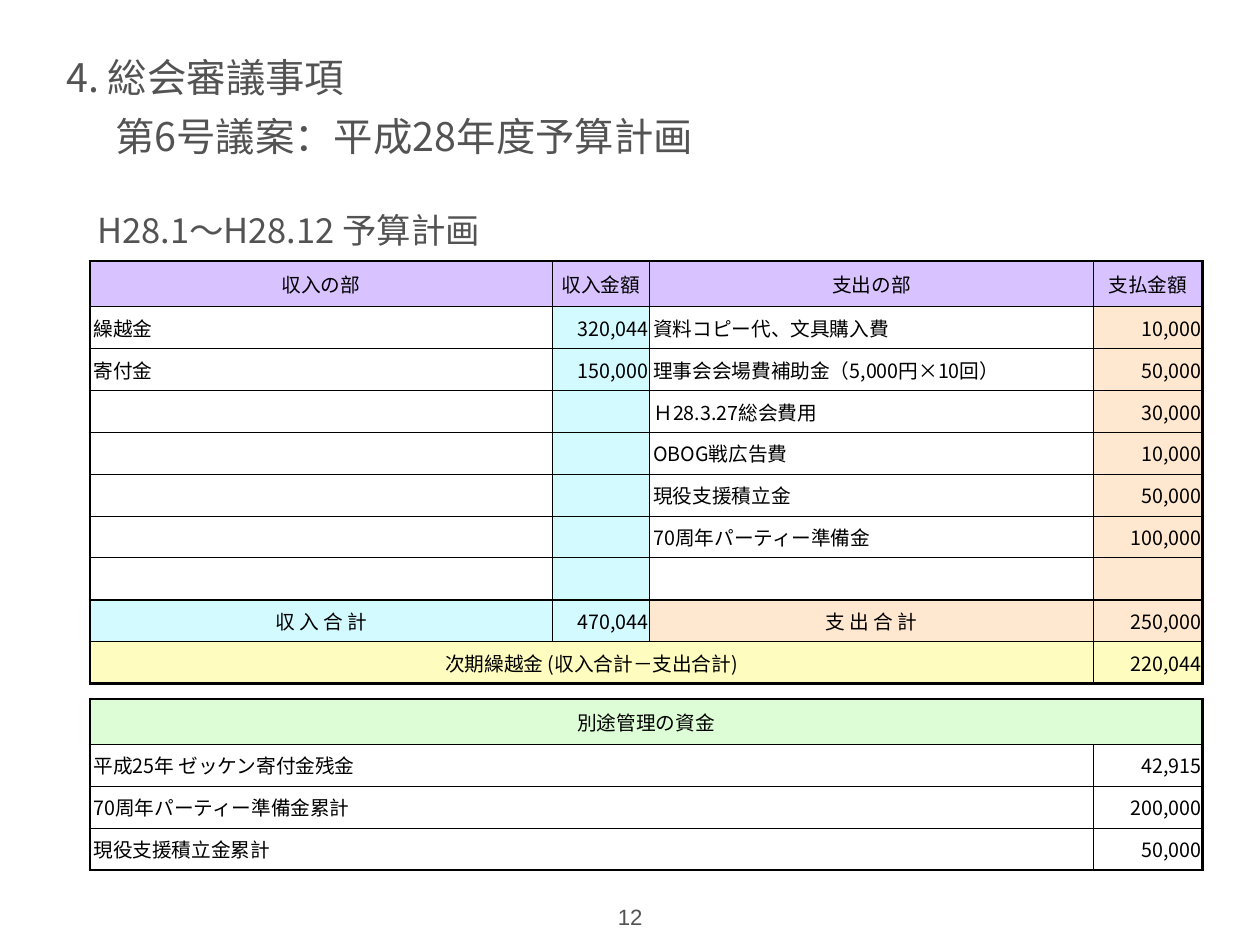
from dataclasses import dataclass

from lxml.etree import SubElement
from pptx import Presentation
from pptx.dml.color import RGBColor
from pptx.enum.text import MSO_ANCHOR as Anchor, MSO_AUTO_SIZE as AutoSize, PP_ALIGN as Align
from pptx.oxml.ns import qn
from pptx.util import Cm, Pt


@dataclass(frozen=True)
class Theme:
    japanese: str = "Noto Sans CJK JP"
    latin: str = "Arial"
    heading_size: int = 32
    caption_size: int = 28
    number_size: int = 18
    cell_size: int = 16
    grey: str = "535353"
    black: str = "000000"
    white: str = "FFFFFF"
    purple: str = "D8C2FF"
    cyan: str = "D2FAFF"
    orange: str = "FFE8CF"
    yellow: str = "FEFCBF"
    green: str = "DDFDD6"
    thin: int = 1
    thick: int = 2


THEME = Theme()
COLUMN_WIDTHS = (13.26, 2.79, 12.73, 3.12)
AMOUNT_COLUMNS = (1, 3)
TABLE_LEFT = 2.57
HEADER_HEIGHT = 1.31
ROW_HEIGHT = 1.2

BUDGET = [
    ("収入の部", "収入金額", "支出の部", "支払金額"),
    ("繰越金", "320,044", "資料コピー代、文具購入費", "10,000"),
    ("寄付金", "150,000", "理事会会場費補助金（5,000円×10回）", "50,000"),
    ("", "", "Ｈ28.3.27総会費用", "30,000"),
    ("", "", "OBOG戦広告費", "10,000"),
    ("", "", "現役支援積立金", "50,000"),
    ("", "", "70周年パーティー準備金", "100,000"),
    ("", "", "", ""),
    ("収 入 合 計", "470,044", "支 出 合 計", "250,000"),
    ("次期繰越金 (収入合計－支出合計)", None, None, "220,044"),
]
TOTAL_ROW = 8
BUDGET_FILLS = [
    (THEME.purple,) * 4,
    *[(THEME.white, THEME.cyan, THEME.white, THEME.orange)] * 7,
    (THEME.cyan, THEME.cyan, THEME.orange, THEME.orange),
    (THEME.yellow,) * 4,
]

FUNDS = [
    ("別途管理の資金", None, None, None),
    ("平成25年 ゼッケン寄付金残金", None, None, "42,915"),
    ("70周年パーティー準備金累計", None, None, "200,000"),
    ("現役支援積立金累計", None, None, "50,000"),
]
FUND_FILLS = [(THEME.green,) * 4, *[(THEME.white,) * 4] * 3]


def write_text(frame, text, size, color=THEME.grey, font=THEME.japanese,
               align=Align.LEFT, indent=0):
    paragraph = frame.paragraphs[0]
    paragraph.alignment = align
    if indent:
        properties = paragraph._p.get_or_add_pPr()
        properties.set("marL", "0")
        properties.set("indent", str(Cm(indent)))
    run = paragraph.add_run()
    run.text = text
    run.font.size = Pt(size)
    run.font.bold = False
    run.font.name = font
    run.font.color.rgb = RGBColor.from_string(color)
    SubElement(run._r.get_or_add_rPr(), qn("a:ea"), typeface=font)


def place_text(holder, text, left, top, width, height, wrap=True,
               anchor=Anchor.MIDDLE, **text_format):
    holder.left, holder.top = Cm(left), Cm(top)
    holder.width, holder.height = Cm(width), Cm(height)
    frame = holder.text_frame
    frame.word_wrap = wrap
    frame.auto_size = AutoSize.NONE
    frame.vertical_anchor = anchor
    frame.margin_left = frame.margin_right = Cm(0.15)
    frame.margin_top = frame.margin_bottom = Cm(0.15)
    write_text(frame, text, **text_format)


def add_label(slide, text, left, top, width, height, **text_format):
    label = slide.shapes.add_textbox(0, 0, 0, 0)
    place_text(label, text, left, top, width, height, **text_format)


def set_borders(cell, left, right, top, bottom):
    properties = cell._tc.get_or_add_tcPr()
    for side, heavy in (("L", left), ("R", right), ("T", top), ("B", bottom)):
        weight = THEME.thick if heavy else THEME.thin
        border = SubElement(properties, qn(f"a:ln{side}"), w=str(Pt(weight)))
        fill = SubElement(border, qn("a:solidFill"))
        SubElement(fill, qn("a:srgbClr"), val=THEME.black)


def merge_blanks(table, rows):
    for row, texts in enumerate(rows):
        blanks = texts.count(None)
        if blanks:
            table.cell(row, 0).merge(table.cell(row, blanks))


def fill_cell(cell, text, fill, align):
    cell.margin_left = cell.margin_right = Cm(0.03)
    cell.margin_top = cell.margin_bottom = Cm(0.03)
    cell.vertical_anchor = Anchor.MIDDLE
    cell.fill.solid()
    cell.fill.fore_color.rgb = RGBColor.from_string(fill)
    if text:
        write_text(cell.text_frame, text, size=THEME.cell_size, color=THEME.black,
                   align=align, indent=0.08 if align == Align.LEFT else 0)


def add_ledger(slide, rows, fills, top, centered_rows=(), total_row=None):
    height = HEADER_HEIGHT + ROW_HEIGHT * (len(rows) - 1)
    table = slide.shapes.add_table(
        len(rows), len(COLUMN_WIDTHS), Cm(TABLE_LEFT), Cm(top),
        Cm(sum(COLUMN_WIDTHS)), Cm(height)).table
    table.first_row = table.horz_banding = False
    for column, width in zip(table.columns, COLUMN_WIDTHS):
        column.width = Cm(width)
    for index, line in enumerate(table.rows):
        line.height = Cm(ROW_HEIGHT if index else HEADER_HEIGHT)
    merge_blanks(table, rows)

    last_row, last_column = len(rows) - 1, len(COLUMN_WIDTHS) - 1
    for row, texts in enumerate(rows):
        for column, text in enumerate(texts):
            cell = table.cell(row, column)
            span = cell.span_width if cell.is_merge_origin else 1
            set_borders(cell, left=column == 0, right=column + span - 1 == last_column,
                        top=row in (0, total_row),
                        bottom=row == last_row or row + 1 == total_row)
            if row == 0:
                align = Align.CENTER
            elif column in AMOUNT_COLUMNS:
                align = Align.RIGHT
            else:
                align = Align.CENTER if row in centered_rows else Align.LEFT
            fill_cell(cell, text, fills[row][column], align)


def main():
    deck = Presentation()
    deck.slide_width, deck.slide_height = Cm(36.12), Cm(27.1)
    slide = deck.slides.add_slide(deck.slide_layouts[5])

    place_text(slide.shapes.title, "4. 総会審議事項", 1.75, 1.42, 28.7, 1.55,
               size=THEME.heading_size)
    add_label(slide, "第6号議案：平成28年度予算計画", 3.15, 3.12, 28.7, 1.55,
              size=THEME.heading_size)
    add_label(slide, "H28.1〜H28.12 予算計画", 2.64, 5.64, 21.41, 1.88,
              size=THEME.caption_size)
    add_ledger(slide, BUDGET, BUDGET_FILLS, top=7.49,
               centered_rows=(TOTAL_ROW, TOTAL_ROW + 1), total_row=TOTAL_ROW)
    add_ledger(slide, FUNDS, FUND_FILLS, top=20.04)
    add_label(slide, "12", 17.58, 25.76, 0.97, 0.99, wrap=False, anchor=Anchor.TOP,
              size=THEME.number_size, font=THEME.latin, align=Align.CENTER)

    deck.save("out.pptx")


if __name__ == "__main__":
    main()
